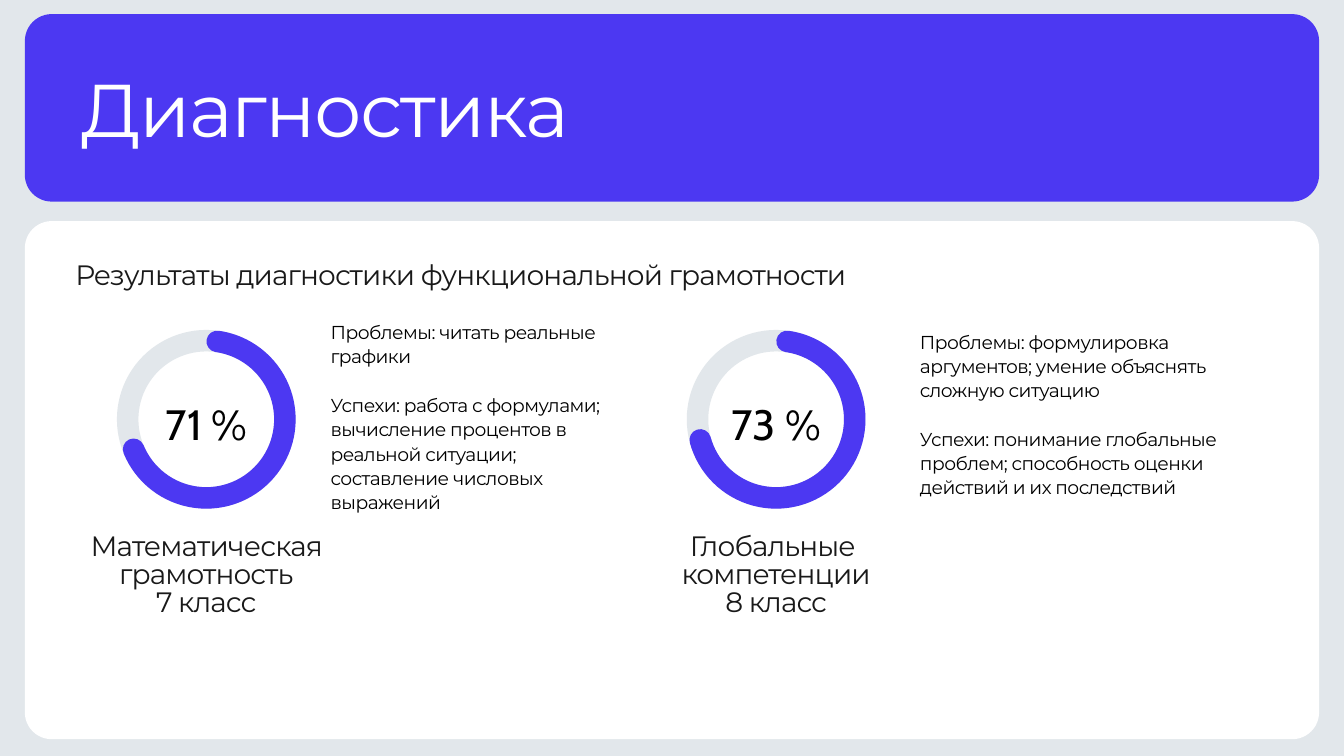
from pptx import Presentation
from pptx.dml.color import RGBColor
from pptx.enum.shapes import MSO_SHAPE
from pptx.enum.text import MSO_ANCHOR, MSO_AUTO_SIZE, PP_ALIGN
from pptx.util import Inches, Pt

LEFT, CENTER = PP_ALIGN.LEFT, PP_ALIGN.CENTER
TOP = MSO_ANCHOR.TOP
NO_AUTOFIT = MSO_AUTO_SIZE.NONE
ROUNDED, DONUT, ARC = MSO_SHAPE.ROUNDED_RECTANGLE, MSO_SHAPE.DONUT, MSO_SHAPE.ARC

THEME = {
    "accent": RGBColor.from_string("4C38F2"),
    "track": RGBColor.from_string("E2E7EB"),
    "white": RGBColor.from_string("FFFFFF"),
    "ink": RGBColor.from_string("191919"),
    "black": RGBColor.from_string("000000"),
    # style: font, size, line spacing, letter spacing, colour, alignment
    "title": ("Montserrat", 80, 96, -1.6, "white", LEFT),
    "heading": ("Montserrat", 30, 30, -0.9, "ink", LEFT),
    "caption": ("Montserrat", 30, 30, -0.9, "ink", CENTER),
    "body": ("Montserrat", 20, 26, -0.6, "black", LEFT),
    "percent": ("Cabin", 45.4, 63.6, 0, "black", CENTER),
}

presentation = Presentation()
presentation.slide_width = Inches(20)
presentation.slide_height = Inches(11.25)
CELL = presentation.slide_width // 20

slide = presentation.slides.add_slide(presentation.slide_layouts[5])
slide.background.fill.solid()
slide.background.fill.fore_color.rgb = THEME["track"]
shapes = slide.shapes


def add_filled(preset, box, colour):
    shape = shapes.add_shape(preset, *(int(v * CELL) for v in box))
    shape.shadow.inherit = False
    shape.fill.solid()
    shape.fill.fore_color.rgb = THEME[colour]
    shape.line.fill.background()
    return shape


def write(shape, box, lines, style, gap=0):
    shape.left, shape.top, shape.width, shape.height = (int(v * CELL) for v in box)
    font_name, size, leading, tracking, colour, alignment = THEME[style]
    frame = shape.text_frame
    frame.word_wrap = True
    frame.auto_size = NO_AUTOFIT
    frame.vertical_anchor = TOP
    frame.margin_left = frame.margin_top = frame.margin_right = frame.margin_bottom = 0
    frame.text = "\n".join(lines)
    for index, paragraph in enumerate(frame.paragraphs):
        paragraph.alignment = alignment
        paragraph.line_spacing = Pt(leading)
        paragraph.space_before = Pt(gap if index else 0)
        font = paragraph.font
        font.name, font.size = font_name, Pt(size)
        font.color.rgb = THEME[colour]
        font._element.set("spc", str(round(tracking * 100)))


CARD_LEFT, CARD_WIDTH, CORNER = 0.37, 19.26, 0.4
for top, height, colour in ((0.21, 2.79, "accent"), (3.29, 7.71, "white")):
    card = add_filled(ROUNDED, (CARD_LEFT, top, CARD_WIDTH, height), colour)
    card.adjustments[0] = CORNER / height

title = shapes.title
shapes._spTree.append(title._element)
write(title, (1.22, 0.94, 15.82, 1.33), ["Диагностика"], "title")
write(shapes.add_textbox(0, 0, 0, 0), (1.12, 3.92, 13.68, 0.44),
      ["Результаты диагностики функциональной грамотности"], "heading")

RADIUS, THICKNESS, CENTER_Y = 1.33, 0.32, 6.24
MIDDLE = RADIUS - THICKNESS / 2
CAP_ANGLE = 8
ARC_DEGREE = 0.6

results = (
    (3.07, 71, 3.7, ["Математическая грамотность", "7 класс"], 4.92, 4.75,
     ["Проблемы: читать реальные графики",
      "Успехи: работа с формулами; вычисление процентов в реальной ситуации; "
      "составление числовых выражений"]),
    (11.55, 73, 3.1, ["Глобальные ", "компетенции", "8 класс"], 13.69, 4.89,
     ["Проблемы: формулировка аргументов; умение объяснять сложную ситуацию",
      "Успехи: понимание глобальные проблем; способность оценки действий "
      "и их последствий"]),
)

for center_x, percent, caption_width, caption, notes_left, notes_top, notes in results:
    write(shapes.add_textbox(0, 0, 0, 0), (center_x - 0.72, 5.79, 1.45, 0.82),
          [f"{percent} %"], "percent")

    ring = add_filled(
        DONUT, (center_x - RADIUS, CENTER_Y - RADIUS, 2 * RADIUS, 2 * RADIUS), "track")
    ring.adjustments[0] = THICKNESS / (2 * RADIUS)

    progress = add_filled(
        ARC, (center_x - MIDDLE, CENTER_Y - MIDDLE, 2 * MIDDLE, 2 * MIDDLE), "accent")
    progress.adjustments[0] = (270 + CAP_ANGLE) * ARC_DEGREE
    progress.adjustments[1] = (percent * 3.6 - CAP_ANGLE - 90) * ARC_DEGREE
    progress.fill.background()
    progress.line.color.rgb = THEME["accent"]
    progress.line.width = int(THICKNESS * CELL)
    progress.line._ln.set("cap", "rnd")

    write(shapes.add_textbox(0, 0, 0, 0),
          (center_x - caption_width / 2, 7.95, caption_width, 1.27), caption, "caption")
    write(shapes.add_textbox(0, 0, 0, 0), (notes_left, notes_top, 4.45, 2.82),
          notes, "body", gap=26)

presentation.save("out.pptx")
